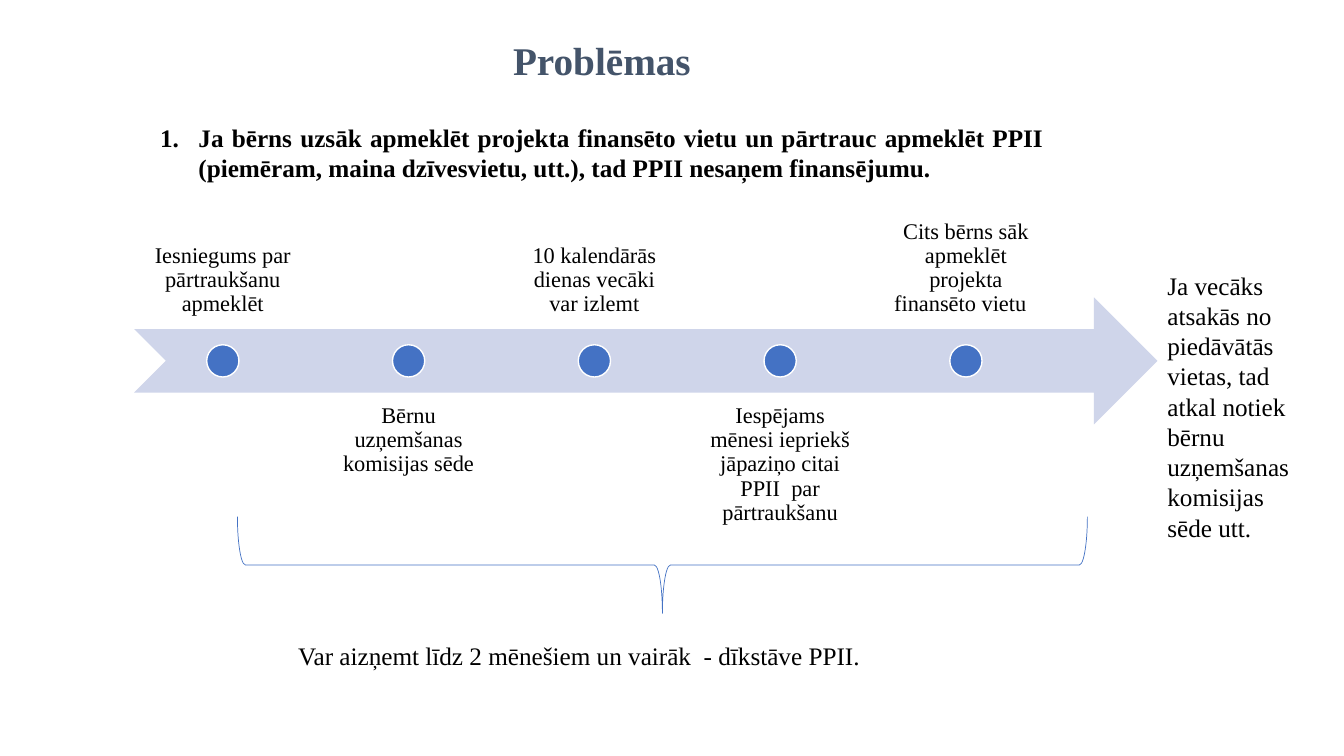
from dataclasses import dataclass

from lxml import etree
from pptx import Presentation
from pptx.dml.color import RGBColor
from pptx.enum import shapes, text
from pptx.oxml import ns
from pptx.util import Inches, Pt


@dataclass(frozen=True)
class Theme:
    font: str = "Times New Roman"
    heading: RGBColor = RGBColor(0x44, 0x54, 0x6A)
    body: RGBColor = RGBColor(0, 0, 0)
    accent: RGBColor = RGBColor(0x44, 0x72, 0xC4)
    band: RGBColor = RGBColor(0xCF, 0xD5, 0xEA)
    white: RGBColor = RGBColor(0xFF, 0xFF, 0xFF)
    heading_size: int = 28
    body_size: int = 18
    step_size: int = 16


THEME = Theme()
SHAPE = shapes.MSO_SHAPE
ALIGN = text.PP_ALIGN
ANCHOR = text.MSO_ANCHOR

STEPS = [
    "Iesniegums par pārtraukšanu apmeklēt",
    "Bērnu uzņemšanas komisijas sēde",
    "10 kalendārās dienas vecāki var izlemt",
    "Iespējams mēnesi iepriekš jāpaziņo citai PPII  par pārtraukšanu",
    "Cits bērns sāk apmeklēt projekta finansēto vietu  ",
]
STEP_LEFT, STEP_PITCH = 1.33, 1.8425
STEP_WIDTH, STEP_HEIGHT = 1.76, 1.26
ABOVE_TOP, BELOW_TOP = 2, 3.89
DOT_TOP, DOT_SIZE = 3.42, 0.32


def add_frame(slide, left, top, width, height):
    box = slide.shapes.add_textbox(
        Inches(left), Inches(top), Inches(width), Inches(height))
    box.text_frame.word_wrap = True
    return box.text_frame


def write(paragraph, words, size, color=THEME.body, bold=False, align=ALIGN.LEFT):
    paragraph.alignment = align
    run = paragraph.add_run()
    run.text = words
    run.font.name = THEME.font
    run.font.size = Pt(size)
    run.font.bold = bold
    run.font.color.rgb = color


def number(paragraph, indent):
    """Give the paragraph an automatic number with a hanging indent."""
    properties = paragraph._p.get_or_add_pPr()
    properties.set("marL", str(Inches(indent)))
    properties.set("indent", str(-Inches(indent)))
    etree.SubElement(properties, ns.qn("a:buAutoNum"), type="arabicPeriod")


def add_figure(slide, kind, left, top, width, height,
               fill=None, line=None, weight=1):
    figure = slide.shapes.add_shape(
        kind, Inches(left), Inches(top), Inches(width), Inches(height))
    figure.shadow.inherit = False
    if fill is None:
        figure.fill.background()
    else:
        figure.fill.solid()
        figure.fill.fore_color.rgb = fill
    if line is None:
        figure.line.fill.background()
    else:
        figure.line.color.rgb = line
        figure.line.width = Pt(weight)
    return figure


def add_note(slide, words, left, top, width, height):
    note = add_frame(slide, left, top, width, height)
    write(note.paragraphs[0], words, THEME.body_size)


def add_heading(slide):
    heading = add_frame(slide, 1.49, 0.31, 8.96, 1.58)
    write(heading.paragraphs[0], "Problēmas", THEME.heading_size,
          THEME.heading, bold=True, align=ALIGN.CENTER)
    problem = heading.add_paragraph()
    problem.space_before = Pt(27.6)
    write(problem,
          "Ja bērns uzsāk apmeklēt projekta finansēto vietu un pārtrauc "
          "apmeklēt PPII (piemēram, maina dzīvesvietu, utt.), tad PPII "
          "nesaņem finansējumu.",
          THEME.body_size, bold=True, align=ALIGN.JUSTIFY)
    number(problem, 0.38)


def add_step(slide, index, words):
    """Place a dot on the arrow, with its label above or below by turns."""
    left = STEP_LEFT + index * STEP_PITCH
    above = index % 2 == 0
    label = add_frame(slide, left, ABOVE_TOP if above else BELOW_TOP,
                      STEP_WIDTH, STEP_HEIGHT)
    label.vertical_anchor = ANCHOR.BOTTOM if above else ANCHOR.TOP
    label.margin_left = label.margin_right = Inches(0.12)
    label.margin_top = label.margin_bottom = Inches(0.12)
    label.paragraphs[0].line_spacing = 0.9
    write(label.paragraphs[0], words, THEME.step_size, align=ALIGN.CENTER)
    add_figure(slide, SHAPE.OVAL, left + (STEP_WIDTH - DOT_SIZE) / 2, DOT_TOP,
               DOT_SIZE, DOT_SIZE, fill=THEME.accent, line=THEME.white)


def main():
    deck = Presentation()
    deck.slide_width, deck.slide_height = Inches(13.33), Inches(7.5)
    slide = deck.slides.add_slide(deck.slide_layouts[6])

    add_heading(slide)

    # Timeline
    add_figure(slide, SHAPE.NOTCHED_RIGHT_ARROW, 1.33, 2.95, 10.15, 1.26,
               fill=THEME.band)
    for index, words in enumerate(STEPS):
        add_step(slide, index, words)

    # Total duration and outcome
    duration = add_figure(slide, SHAPE.LEFT_BRACE, 6.09, 1.39, 0.96, 8.43,
                          line=THEME.accent, weight=0.5)
    duration.rotation = 270
    add_note(slide, "Var aizņemt līdz 2 mēnešiem un vairāk  - dīkstāve PPII.",
             2.86, 6.3, 8.5, 0.4)
    add_note(slide,
             "Ja vecāks atsakās no piedāvātās vietas, tad atkal notiek bērnu "
             "uzņemšanas komisijas sēde utt.",
             11.48, 2.63, 1.47, 2.83)

    deck.save("out.pptx")


if __name__ == "__main__":
    main()
